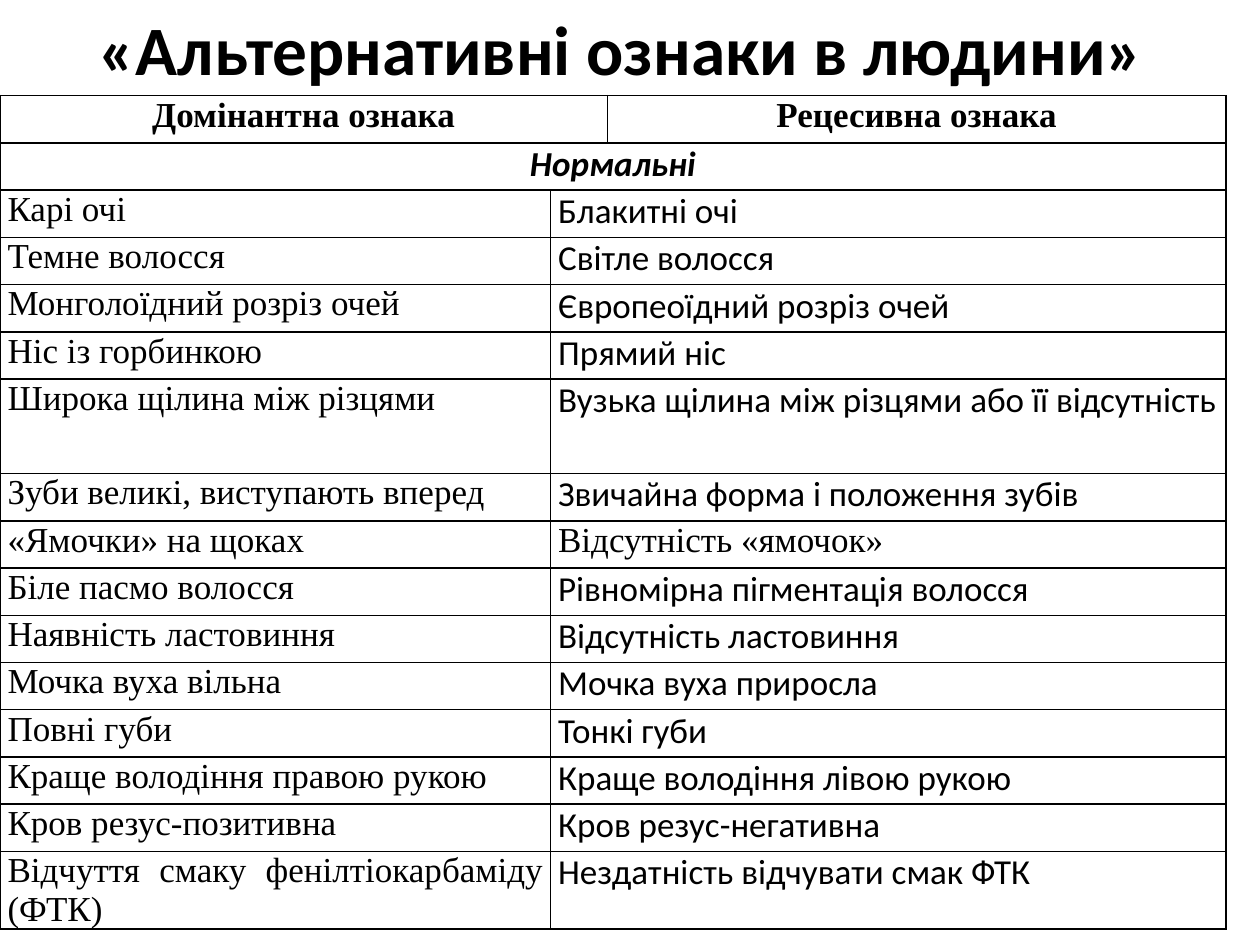
import pptx
import pptx.util
import pptx.dml.color
import pptx.enum.text
import pptx.oxml
import pptx.oxml.ns

Inches = pptx.util.Inches
Pt = pptx.util.Pt
ALIGN = pptx.enum.text.PP_ALIGN

COLORS = {"ink": "000000", "paper": "FFFFFF"}
SERIF, SANS = "Times New Roman", "Calibri"
TITLE = "«Альтернативні ознаки в людини»"
HEADINGS = ("Домінантна ознака", "Рецесивна ознака")
SECTION = "Нормальні"
TRAITS = [
    ("Карі очі", "Блакитні очі"),
    ("Темне волосся", "Світле волосся"),
    ("Монголоїдний розріз очей", "Європеоїдний розріз очей"),
    ("Ніс із горбинкою", "Прямий ніс"),
    ("Широка щілина між різцями", "Вузька щілина між різцями або її відсутність"),
    ("Зуби великі, виступають вперед", "Звичайна форма і положення зубів"),
    ("«Ямочки» на щоках", "Відсутність «ямочок»"),
    ("Біле пасмо волосся", "Рівномірна пігментація волосся"),
    ("Наявність ластовиння", "Відсутність ластовиння"),
    ("Мочка вуха вільна", "Мочка вуха приросла"),
    ("Повні губи", "Тонкі губи"),
    ("Краще володіння правою рукою", "Краще володіння лівою рукою"),
    ("Кров резус-позитивна", "Кров резус-негативна"),
    ("Відчуття смаку фенілтіокарбаміду (ФТК)", "Нездатність відчувати смак ФТК"),
]
SERIF_RECESSIVE = {"Відсутність «ямочок»"}
COLUMN_WIDTHS = (4.37, 0.45, 4.91)
TALL_ROW = 6
TALL_HEIGHT = Inches(0.75)
ROW_HEIGHT = TALL_HEIGHT // 2


def rgb(name):
    return pptx.dml.color.RGBColor.from_string(COLORS[name])


def style_font(paragraph, name, size, bold=False, italic=False):
    for run in paragraph.runs:
        run.font.name = name
        run.font.size = Pt(size)
        run.font.bold = bold
        run.font.italic = italic
        run.font.color.rgb = rgb("ink")


def fill_cell(cell, text, font, align, bold=False, italic=False):
    cell.text_frame.text = text
    paragraph = cell.text_frame.paragraphs[0]
    paragraph.alignment = align
    paragraph.space_before = Pt(14)
    paragraph.space_after = Pt(10 if font == SERIF else 0)
    style_font(paragraph, font, 20, bold, italic)


def format_cell(cell):
    cell.margin_left = cell.margin_right = Inches(0.06)
    cell.margin_top = cell.margin_bottom = 0
    properties = cell._tc.get_or_add_tcPr()
    for side in ("lnL", "lnR", "lnT", "lnB"):
        properties.append(pptx.oxml.parse_xml(
            f'<a:{side} {pptx.oxml.ns.nsdecls("a")} w="{Pt(1)}"><a:solidFill>'
            f'<a:srgbClr val="{COLORS["ink"]}"/></a:solidFill></a:{side}>'))
    cell.fill.solid()
    cell.fill.fore_color.rgb = rgb("paper")


presentation = pptx.Presentation()
presentation.slide_width = Inches(10)
presentation.slide_height = Inches(7.5)
slide = presentation.slides.add_slide(presentation.slide_layouts[5])

title = slide.shapes.title
title.left, title.top, title.width, title.height = map(Inches, (0.43, 0, 9, 0.76))
title.text_frame.text = TITLE
title.text_frame.vertical_anchor = pptx.enum.text.MSO_ANCHOR.MIDDLE
title.text_frame.paragraphs[0].alignment = ALIGN.CENTER
style_font(title.text_frame.paragraphs[0], SANS, 39.6, bold=True)

row_count = len(TRAITS) + 2
table = slide.shapes.add_table(
    row_count, len(COLUMN_WIDTHS), 0, Inches(0.76),
    Inches(sum(COLUMN_WIDTHS)), ROW_HEIGHT * (row_count + 1)).table
table.first_row = table.horz_banding = False
for column, width in zip(table.columns, COLUMN_WIDTHS):
    column.width = Inches(width)
for index, row in enumerate(table.rows):
    row.height = TALL_HEIGHT if index == TALL_ROW else ROW_HEIGHT
    for cell in row.cells:
        format_cell(cell)

table.cell(0, 0).merge(table.cell(0, 1))
table.cell(1, 0).merge(table.cell(1, 2))
for column_index, heading in zip((0, 2), HEADINGS):
    fill_cell(table.cell(0, column_index), heading, SERIF, ALIGN.CENTER, bold=True)
fill_cell(table.cell(1, 0), SECTION, SANS, ALIGN.CENTER, bold=True, italic=True)
for index, (dominant, recessive) in enumerate(TRAITS, start=2):
    table.cell(index, 1).merge(table.cell(index, 2))
    fill_cell(table.cell(index, 0), dominant, SERIF, ALIGN.JUSTIFY)
    recessive_font = SERIF if recessive in SERIF_RECESSIVE else SANS
    fill_cell(table.cell(index, 1), recessive, recessive_font, ALIGN.JUSTIFY)

presentation.save("out.pptx")
